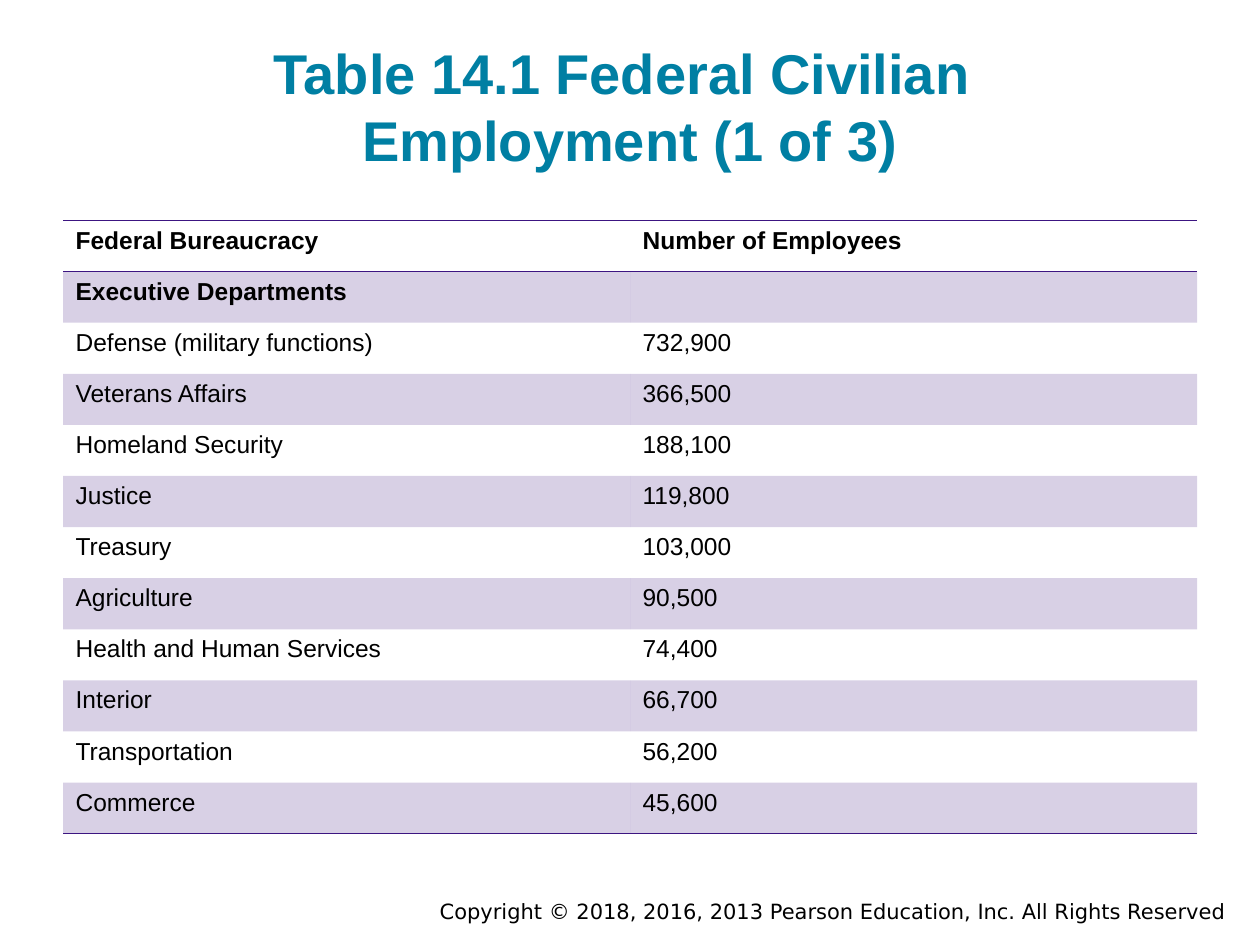
from dataclasses import dataclass

from lxml.etree import SubElement as Sub
from pptx import Presentation
from pptx.dml.color import RGBColor as Rgb
from pptx.enum.text import MSO_ANCHOR as Anchor, PP_ALIGN as Align
from pptx.oxml.ns import qn
from pptx.util import Inches, Pt


@dataclass(frozen=True)
class Theme:
    head: str = "007FA3"
    text: str = "000000"
    rule: str = "3C1581"
    tint: int = 20
    face: str = "Arial"
    foot: str = "DejaVu Sans"
    big: int = 32
    body: int = 14
    small: int = 12
    plain: str = "{2D5ABB26-0587-4C30-8999-92F81FD0307C}"


LOOK = Theme()
ROWS = [
    ("Federal Bureaucracy", "Number of Employees"),
    ("Executive Departments", ""),
    ("Defense (military functions)", "732,900"),
    ("Veterans Affairs", "366,500"),
    ("Homeland Security", "188,100"),
    ("Justice", "119,800"),
    ("Treasury", "103,000"),
    ("Agriculture", "90,500"),
    ("Health and Human Services", "74,400"),
    ("Interior", "66,700"),
    ("Transportation", "56,200"),
    ("Commerce", "45,600"),
]


def apply(item, values):
    for name, value in values.items():
        setattr(item, name, value)


def write(frame, text, size, color=LOOK.text, face=LOOK.face, bold=False, align=Align.LEFT):
    frame.text = text
    para = frame.paragraphs[0]
    para.alignment = align
    for run in para.runs:
        apply(run.font, {"name": face, "size": Pt(size), "bold": bold})
        run.font.color.rgb = Rgb.from_string(color)


def place(shape, box):
    apply(shape, dict(zip(("left", "top", "width", "height"), map(Inches, box))))


def rule(cell, side):
    line = Sub(cell._tc.get_or_add_tcPr(), qn(f"a:ln{side}"), w=str(Pt(1)))
    Sub(Sub(line, qn("a:solidFill")), qn("a:srgbClr"), val=LOOK.rule)


def shade(cell):
    cell.fill.solid()
    cell.fill.fore_color.rgb = Rgb.from_string(LOOK.rule)
    color = cell._tc.tcPr.find(".//" + qn("a:solidFill") + "/" + qn("a:srgbClr"))
    for color in cell._tc.tcPr.findall(qn("a:solidFill") + "/" + qn("a:srgbClr")):
        Sub(color, qn("a:alpha"), val=str(LOOK.tint * 1000))


def add_title(slide, box, text):
    title = slide.shapes.title
    place(title, box)
    frame = title.text_frame
    sides = ("left", "top", "right", "bottom")
    apply(frame, {f"margin_{side}": Inches(0.1) for side in sides})
    apply(frame, {"vertical_anchor": Anchor.BOTTOM, "word_wrap": True})
    write(frame, text, LOOK.big, LOOK.head, bold=True, align=Align.CENTER)
    for gap in frame.paragraphs[0]._p.findall(qn("a:br")):
        Sub(gap, qn("a:rPr"), sz=str(LOOK.big * 100))


def add_staff(slide, box, rows):
    count = len(rows)
    shape = slide.shapes.add_table(count, len(rows[0]), *map(Inches, box))
    table = shape.table
    apply(table, {"first_row": False, "horz_banding": False})
    table._tbl.tblPr.find(qn("a:tableStyleId")).text = LOOK.plain
    for i, row in enumerate(rows):
        table.rows[i].height = Inches(box[3] / count)
        for j, text in enumerate(row):
            cell = table.cell(i, j)
            write(cell.text_frame, text, LOOK.body, bold=i < 2)
            if i == 0:
                rule(cell, "T")
            if i in (0, count - 1):
                rule(cell, "B")
            if i % 2:
                shade(cell)
            else:
                cell.fill.background()


def add_foot(slide, box, text):
    frame = slide.shapes.add_textbox(*map(Inches, box)).text_frame
    frame.word_wrap = True
    write(frame, text, LOOK.small, face=LOOK.foot, align=Align.RIGHT)


def main():
    deck = Presentation()
    apply(deck, {"slide_width": Inches(10), "slide_height": Inches(7.5)})
    slide = deck.slides.add_slide(deck.slide_layouts[5])
    add_foot(slide, (2, 7.08, 7.83, 0.3),
             "Copyright © 2018, 2016, 2013 Pearson Education, Inc. All Rights Reserved")
    add_title(slide, (0.5, 0.27, 9, 1.2),
              "Table 14.1 Federal Civilian \vEmployment (1 of 3)")
    add_staff(slide, (0.5, 1.75, 9, 4.87), ROWS)
    deck.save("out.pptx")


if __name__ == "__main__":
    main()
